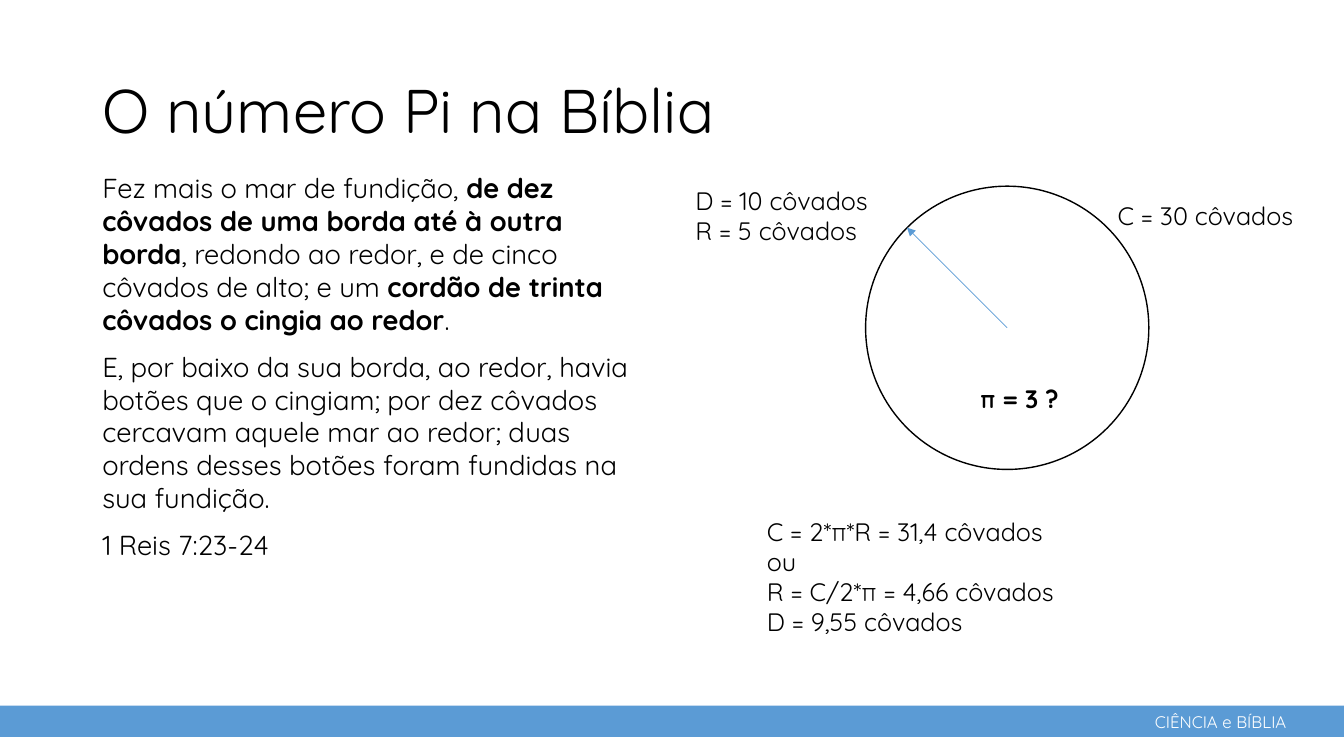
from dataclasses import dataclass

import pptx
import pptx.dml.color
import pptx.enum.dml
import pptx.enum.shapes
import pptx.enum.text
import pptx.oxml
import pptx.oxml.ns
import pptx.util

Pt = pptx.util.Pt
Anchor = pptx.enum.text.MSO_ANCHOR
Preset = pptx.enum.shapes.MSO_SHAPE


@dataclass(frozen=True)
class Theme:
    font: str = "Quicksand"
    ink: str = "000000"
    paper: str = "FFFFFF"
    accent: str = "5B9BD5"
    title: float = 44
    verse: float = 19.6
    label: float = 18
    footer: float = 12


@dataclass(frozen=True)
class Box:
    left: float
    top: float
    width: float
    height: float

    def lengths(self) -> tuple:
        return Pt(self.left), Pt(self.top), Pt(self.width), Pt(self.height)


@dataclass(frozen=True)
class Run:
    text: str
    bold: bool = False


@dataclass(frozen=True)
class Label:
    box: Box
    lines: tuple[str, ...]
    bold: bool = False


THEME = Theme()

VERSES = [
    [
        Run("Fez mais o mar de fundição, "),
        Run("de dez côvados de uma borda até à outra borda", True),
        Run(", redondo ao redor, e de cinco côvados de alto; e um "),
        Run("cordão de trinta côvados o cingia ao redor", True),
        Run("."),
    ],
    [Run("E, por baixo da sua borda, ao redor, havia botões que o cingiam; "
         "por dez côvados cercavam aquele mar ao redor; duas ordens desses "
         "botões foram fundidas na sua fundição.")],
    [Run("1 Reis 7:23-24")],
]

LABELS = [
    Label(Box(791.3, 139.7, 153.4, 28.8), ("C = 30 côvados",)),
    Label(Box(489.6, 128.9, 151.9, 51.1), ("D = 10 côvados", "R = 5 côvados")),
    Label(Box(540.7, 365, 238.3, 94.3),
          ("C = 2*π*R = 31,4 côvados", "ou",
           "R = C/2*π = 4,66 côvados", "D = 9,55 côvados")),
    Label(Box(693.4, 270, 73.4, 28.8), ("π = 3 ?",), bold=True),
]


def rgb(value: str) -> pptx.dml.color.RGBColor:
    return pptx.dml.color.RGBColor.from_string(value)


def add_text(slide, box: Box, paragraphs: list[list[Run]], *, size: float,
             color: str = THEME.ink, wrap: bool = False, gap: float = 0,
             spacing: float = 1.0, anchor=Anchor.TOP) -> None:
    frame = slide.shapes.add_textbox(*box.lengths()).text_frame
    frame.word_wrap = wrap
    frame.vertical_anchor = anchor
    for index, runs in enumerate(paragraphs):
        paragraph = frame.add_paragraph() if index else frame.paragraphs[0]
        paragraph.line_spacing = spacing
        if index:
            paragraph.space_before = Pt(gap)
        for part in runs:
            run = paragraph.add_run()
            run.text = part.text
            run.font.name = THEME.font
            run.font.size = Pt(size)
            run.font.bold = part.bold
            run.font.color.rgb = rgb(color)


def add_figure(slide, preset, box: Box, fill: str,
               outline: str | None = None) -> None:
    figure = slide.shapes.add_shape(preset, *box.lengths())
    figure.shadow.inherit = False
    figure.fill.solid()
    figure.fill.fore_color.rgb = rgb(fill)
    if outline:
        figure.line.color.rgb = rgb(outline)
        figure.line.width = Pt(1)
    else:
        figure.line.fill.background()


def add_arrow(slide, start: tuple[float, float],
              end: tuple[float, float]) -> None:
    arrow = slide.shapes.add_connector(
        pptx.enum.shapes.MSO_CONNECTOR.STRAIGHT,
        *(Pt(value) for value in start + end))
    arrow.line.color.rgb = rgb(THEME.accent)
    arrow.line.width = Pt(0.5)
    head = pptx.oxml.parse_xml(
        f'<a:tailEnd {pptx.oxml.ns.nsdecls("a")} type="triangle"/>')
    arrow.line._get_or_add_ln().append(head)
    arrow._element.spPr.append(pptx.oxml.parse_xml(
        f'<a:effectLst {pptx.oxml.ns.nsdecls("a")}/>'))


def main() -> None:
    deck = pptx.Presentation()
    deck.slide_width, deck.slide_height = Pt(960), Pt(540)
    slide = deck.slides.add_slide(deck.slide_layouts[6])

    # Footer band
    add_figure(slide, Preset.RECTANGLE, Box(0, 504, 960, 22.3), THEME.accent)
    add_text(slide, Box(817.9, 504.7, 113, 21.6), [[Run("CIÊNCIA e BÍBLIA")]],
             size=THEME.footer, color=THEME.paper)

    # Title and Bible passage
    add_text(slide, Box(66, 28.8, 828, 104.4), [[Run("O número Pi na Bíblia")]],
             size=THEME.title, wrap=True, spacing=0.9, anchor=Anchor.MIDDLE)
    add_text(slide, Box(66, 118.8, 393.8, 304.6), VERSES,
             size=THEME.verse, wrap=True, gap=10)

    # Circle with its radius
    add_figure(slide, Preset.OVAL, Box(618.3, 133, 202.3, 202.3),
               THEME.paper, THEME.ink)
    add_arrow(slide, (719.4, 234.1), (647.9, 162.6))

    # Measurements and calculations
    for label in LABELS:
        add_text(slide, label.box,
                 [[Run(line, label.bold)] for line in label.lines],
                 size=THEME.label)

    deck.save("out.pptx")


if __name__ == "__main__":
    main()
